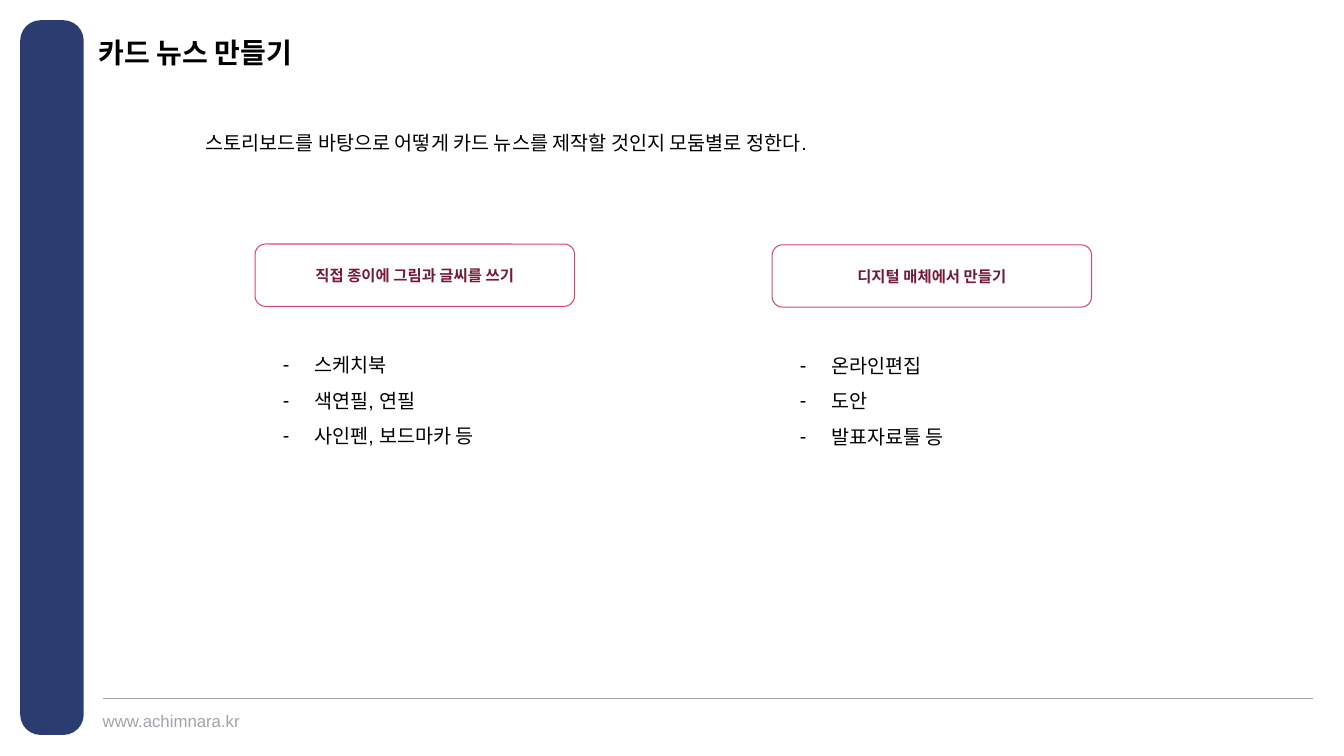
from lxml import etree
from pptx import Presentation
from pptx import util as u
from pptx.dml.color import RGBColor
from pptx.enum import shapes, text
from pptx.oxml import ns

COLORS = {"navy": "2B3C71", "gray": "9EA4AA", "black": "000000",
          "white": "FFFFFF", "rose": "D54773", "wine": "741A36"}
LATIN, KOREAN = "Arial", "Noto Sans CJK KR"
COLUMNS = [
    (6.43, 6.15, "직접 종이에 그림과 글씨를 쓰기",
     ["스케치북", "색연필, 연필", "사인펜, 보드마카 등"]),
    (19.46, 6.17, "디지털 매체에서 만들기",
     ["온라인편집", "도안", "발표자료툴 등"]),
]


def color(name):
    return RGBColor.from_string(COLORS[name])


def place(left, top, width, height):
    return [u.Cm(length) for length in (left, top, width, height)]


def style(para, size, tint="black", name=LATIN, bold=False):
    font = para.font
    font.size, font.bold, font.name = u.Pt(size), bold, name
    font.color.rgb = color(tint)
    defaults = para._p.pPr.find(ns.qn("a:defRPr"))
    etree.SubElement(defaults, ns.qn("a:ea"), typeface=KOREAN)


def clear_margins(frame):
    frame.margin_left = frame.margin_right = 0
    frame.margin_top = frame.margin_bottom = 0


def add_round_box(page, box, fill, line=None):
    shape = page.shapes.add_shape(shapes.MSO_SHAPE.ROUNDED_RECTANGLE, *place(*box))
    shape.shadow.inherit = False
    shape.fill.solid()
    shape.fill.fore_color.rgb = color(fill)
    if line:
        shape.line.color.rgb = color(line)
        shape.line.width = u.Pt(0.75)
    else:
        shape.line.fill.background()
    return shape


def add_text(page, box, lines, size, tint="black", spacing=None, bullet=None):
    frame = page.shapes.add_textbox(*place(*box)).text_frame
    frame.word_wrap = True
    frame.text = "\n".join(lines)
    for para in frame.paragraphs:
        if spacing:
            para.line_spacing = spacing
        if bullet:
            props = para._p.get_or_add_pPr()
            props.set("marL", str(u.Cm(0.79)))
            props.set("indent", str(-u.Cm(0.79)))
            etree.SubElement(props, ns.qn("a:buFont"), typeface=LATIN)
            etree.SubElement(props, ns.qn("a:buChar"), char=bullet)
        style(para, size, tint)
    return frame


def add_frame(page):
    bar = add_round_box(page, (0.51, 0.51, 1.6, 18.01), "navy")
    bar.adjustments[0] = 0.32
    rule = page.shapes.add_connector(
        shapes.MSO_CONNECTOR.STRAIGHT, *place(33.1, 17.6, 2.59, 17.6))
    rule.line.color.rgb = color("gray")
    rule.line.width = u.Pt(0.5)
    etree.SubElement(rule._element.spPr, ns.qn("a:effectLst"))
    site = add_text(page, (2.59, 17.91, 3.81, 0.51), ["www.achimnara.kr"], 12, "gray")
    clear_margins(site)


def add_title(page, box, wording):
    title = page.shapes.title
    title.left, title.top, title.width, title.height = place(*box)
    frame = title.text_frame
    frame.text = wording
    frame.auto_size = text.MSO_AUTO_SIZE.NONE
    frame.vertical_anchor = text.MSO_ANCHOR.TOP
    clear_margins(frame)
    para = frame.paragraphs[0]
    para.alignment = text.PP_ALIGN.LEFT
    para.line_spacing = 0.9
    style(para, 20, bold=True)


def add_column(page, left, top, heading, items):
    card = add_round_box(page, (left, top, 8.05, 1.57), "white", "rose")
    frame = card.text_frame
    frame.text = heading
    frame.vertical_anchor = text.MSO_ANCHOR.MIDDLE
    para = frame.paragraphs[0]
    para.alignment = text.PP_ALIGN.CENTER
    style(para, 11, "wine", KOREAN, True)
    add_text(page, (left + 0.45, top + 2.33, 7.19, 2.84), items, 14,
             spacing=1.5, bullet="-")


def main():
    deck = Presentation()
    deck.slide_width, deck.slide_height = u.Cm(33.87), u.Cm(19.05)
    page = deck.slides.add_slide(deck.slide_layouts[5])
    add_frame(page)
    add_title(page, (2.49, 0.99, 19.99, 0.71), "카드 뉴스 만들기")
    add_text(page, (4.93, 2.87, 25.27, 1.04),
             ["스토리보드를 바탕으로 어떻게 카드 뉴스를 제작할 것인지 모둠별로 정한다."],
             14, spacing=1.5)
    for column in COLUMNS:
        add_column(page, *column)
    deck.save("out.pptx")


if __name__ == "__main__":
    main()
